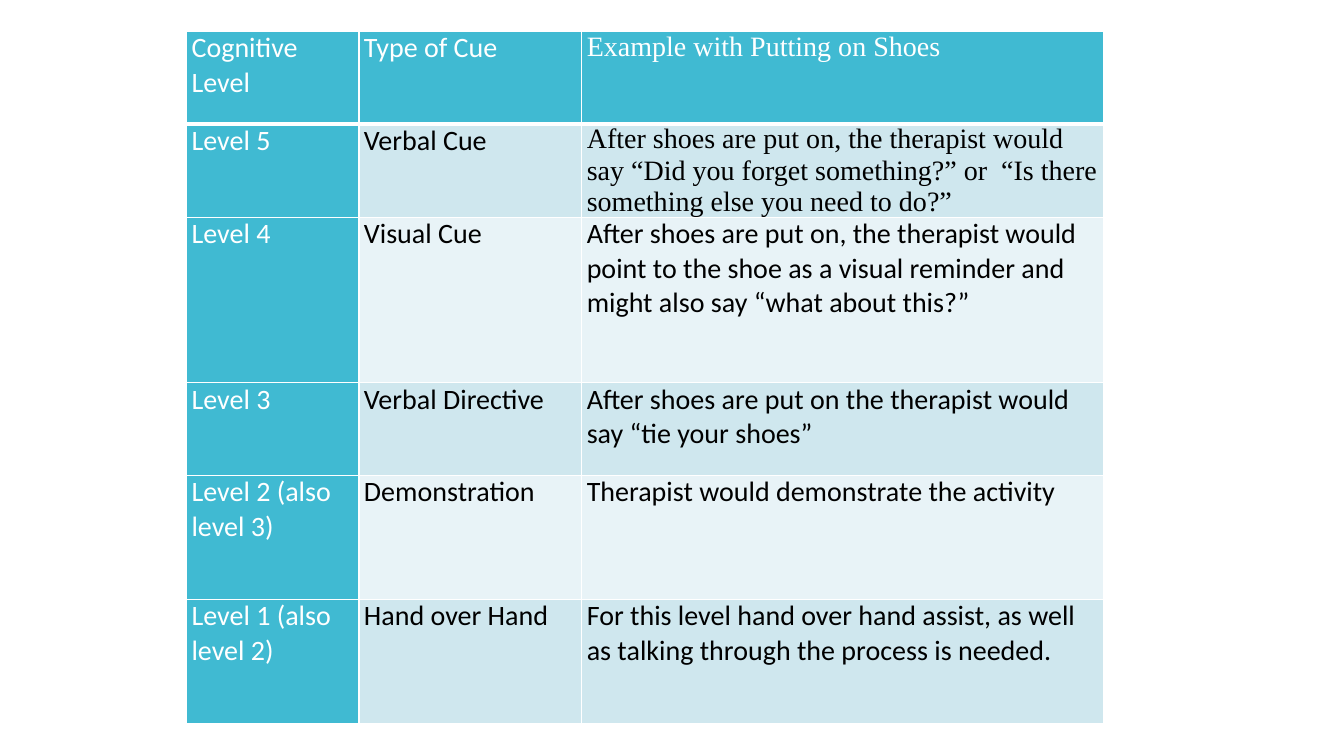
"""Build a slide with a table of cues for each cognitive level."""
import pptx
import pptx.dml.color
import pptx.oxml
import pptx.oxml.ns
import pptx.util

Inches = pptx.util.Inches
Pt = pptx.util.Pt


def color(value):
    return pptx.dml.color.RGBColor.from_string(value)


def add_border(cell, side, points):
    cell._tc.get_or_add_tcPr().append(pptx.oxml.parse_xml(
        f'<a:{side} {pptx.oxml.ns.nsdecls("a")} w="{Pt(points)}">'
        f'<a:solidFill><a:srgbClr val="{WHITE}"/></a:solidFill></a:{side}>'))


WHITE, BLACK, TEAL = "FFFFFF", "000000", "40BAD2"
BANDS = ["E8F3F7", "CFE7EE"]
COL_WIDTHS = [1.71, 2.21, 5.18]
ROW_HEIGHTS = [0.92, 0.92, 1.64, 0.92, 1.23, 1.23]
SERIF_CELLS = [(0, 2), (1, 2)]
MARGINS = {"margin_left": Inches(0.05), "margin_right": Inches(0.05),
           "margin_top": 0, "margin_bottom": 0}
ROWS = [
    ["Cognitive Level", "Type of Cue", "Example with Putting on Shoes"],
    ["Level 5", "Verbal Cue",
     "After shoes are put on, the therapist would say “Did you forget something?” "
     "or  “Is there something else you need to do?”"],
    ["Level 4", "Visual Cue",
     "After shoes are put on, the therapist would point to the shoe as a visual "
     "reminder and might also say “what about this?”"],
    ["Level 3", "Verbal Directive",
     "After shoes are put on the therapist would say “tie your shoes”"],
    ["Level 2 (also level 3)", "Demonstration",
     "Therapist would demonstrate the activity"],
    ["Level 1 (also level 2)", "Hand over Hand",
     "For this level hand over hand assist, as well as talking through the "
     "process is needed."],
]

prs = pptx.Presentation()
prs.slide_width, prs.slide_height = Inches(13.33), Inches(7.5)
s = prs.slides.add_slide(prs.slide_layouts[6])

table = s.shapes.add_table(
    len(ROWS), len(COL_WIDTHS), Inches(1.85), Inches(0.31),
    Inches(sum(COL_WIDTHS)), Inches(sum(ROW_HEIGHTS))).table
table.first_col = True
for column, width in zip(table.columns, COL_WIDTHS):
    column.width = Inches(width)
for row, height in zip(table.rows, ROW_HEIGHTS):
    row.height = Inches(height)

for i, texts in enumerate(ROWS):
    for j, text in enumerate(texts):
        cell = table.cell(i, j)
        heading = i == 0 or j == 0
        for name, value in MARGINS.items():
            setattr(cell, name, value)
        for side in ["lnL", "lnR", "lnT", "lnB"]:
            header_edge = (i, side) in [(0, "lnB"), (1, "lnT")]
            add_border(cell, side, 3 if header_edge else 1)
        cell.fill.solid()
        cell.fill.fore_color.rgb = color(TEAL if heading else BANDS[i % 2])
        r = cell.text_frame.paragraphs[0].add_run()
        r.text = text
        font_format = {
            "name": "Times New Roman" if (i, j) in SERIF_CELLS else "Calibri",
            "size": Pt(20), "bold": False}
        for name, value in font_format.items():
            setattr(r.font, name, value)
        r.font.color.rgb = color(WHITE if heading else BLACK)

prs.save("out.pptx")
